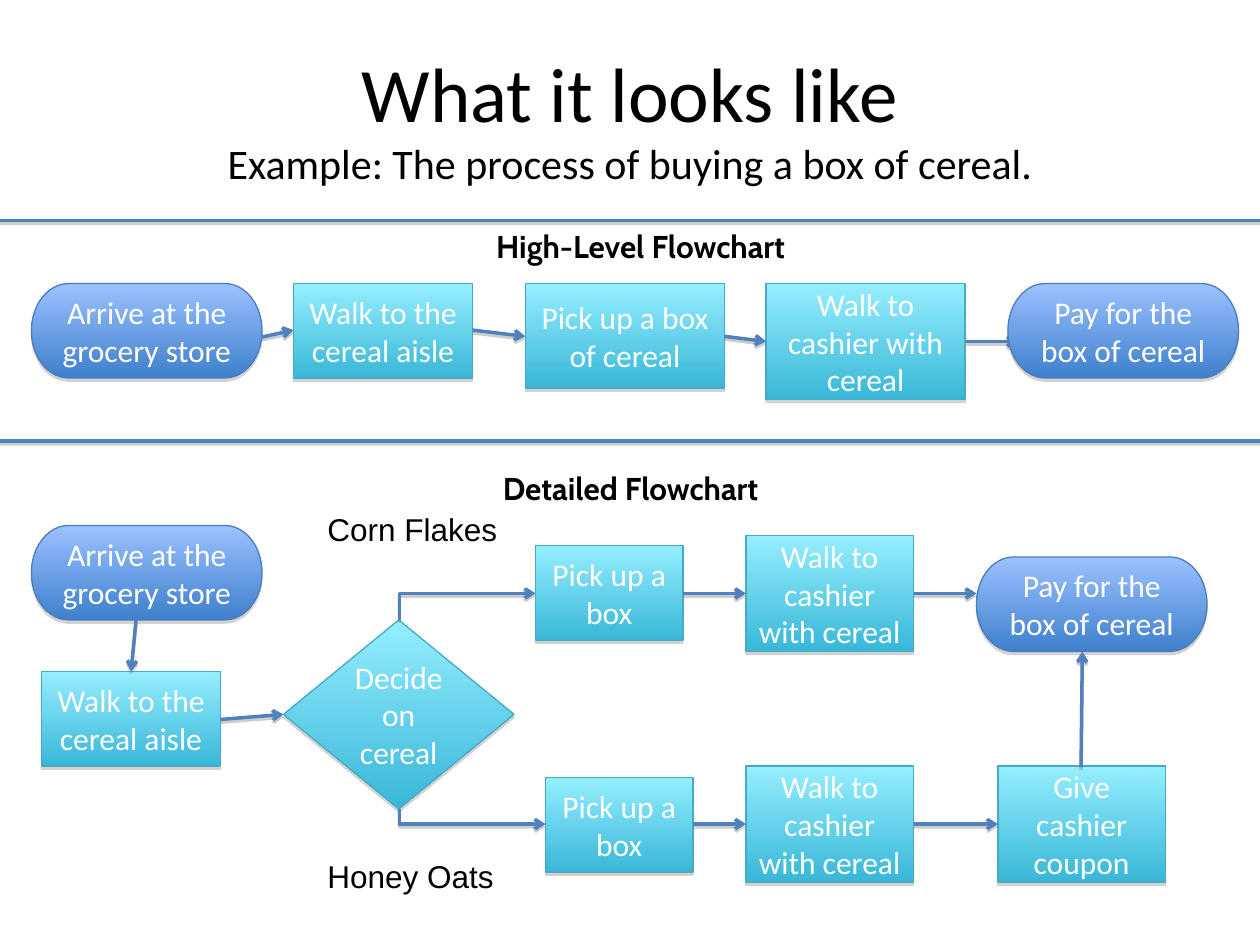
from lxml.etree import SubElement
from pptx import Presentation
from pptx.dml.color import RGBColor
from pptx.enum.shapes import MSO_CONNECTOR as Connector, MSO_SHAPE as Preset
from pptx.enum.text import MSO_ANCHOR as Anchor, MSO_AUTO_SIZE as AutoSize, PP_ALIGN as Align
from pptx.oxml.ns import qn
from pptx.util import Inches, Pt

# Gradient top, gradient bottom, outline
AQUA = ("95EEFF", "39B7D8", "46AAC5")
BLUE = ("9BC1FF", "3F80CD", "4A7EBB")
LINE = "4F81BD"

TERMINATOR_SIZE = (1.83, 0.75)
SHORT_BOX = (1.17, 0.75)
AISLE_BOX = (1.42, 0.75)
CASHIER_BOX = (1.33, 0.92)
UPPER_ROW, LOWER_ROW, DECISION_X = 4.71, 6.54, 3.17

# Text, left, top, size
PROCESSES = [
    ("Walk to the cereal aisle", 2.33, 2.25, AISLE_BOX),
    ("Pick up a box of cereal", 4.17, 2.25, (1.58, 0.83)),
    ("Walk to cashier with cereal", 6.08, 2.25, (1.58, 0.92)),
    ("Walk to the cereal aisle", 0.33, 5.33, AISLE_BOX),
    ("Pick up a box", 4.25, 4.33, SHORT_BOX),
    ("Pick up a box", 4.33, 6.17, SHORT_BOX),
    ("Walk to cashier with cereal", 5.92, 4.25, CASHIER_BOX),
    ("Walk to cashier with cereal", 5.92, 6.08, CASHIER_BOX),
    ("Give cashier coupon", 7.92, 6.08, CASHIER_BOX),
]
TERMINATORS = [
    ("Arrive at the grocery store", 0.25, 2.25),
    ("Pay for the box of cereal", 8, 2.25),
    ("Arrive at the grocery store", 0.25, 4.17),
    ("Pay for the box of cereal", 7.75, 4.42),
]
# Start x, start y, end x, end y
ARROWS = [
    (1.92, 2.71, 2.33, 2.62),
    (3.75, 2.62, 4.17, 2.67),
    (5.75, 2.67, 6.08, 2.71),
    (7.67, 2.71, 8.08, 2.71),
    (1.08, 4.92, 1.04, 5.33),
    (1.75, 5.71, 2.25, 5.67),
    (5.42, UPPER_ROW, 5.92, UPPER_ROW),
    (7.25, UPPER_ROW, 7.75, UPPER_ROW),
    (5.5, LOWER_ROW, 5.92, LOWER_ROW),
    (7.25, LOWER_ROW, 7.92, LOWER_ROW),
    (8.58, 6.09, 8.59, 5.17),
]
# Text, left, top, width, font, bold, alignment
LABELS = [
    ("High-Level Flowchart", 2, 1.75, 6.17, "Cabin", True, Align.CENTER),
    ("Detailed Flowchart", 1.92, 3.67, 6.17, "Cabin", True, Align.CENTER),
    ("Corn Flakes", 2.5, 4, 1.75, "Arial", False, Align.LEFT),
    ("Honey Oats", 2.5, 6.75, 1.75, "Arial", False, Align.LEFT),
]


def color(value):
    return RGBColor.from_string(value)


def add_run(paragraph, text, size=18, font="Calibri", fill="000000", bold=False):
    run = paragraph.add_run()
    run.text = text
    run.font.size = Pt(size)
    run.font.name = font
    run.font.bold = bold
    run.font.color.rgb = color(fill)


def add_shadow(shape, distance, opacity):
    """Put a sharp grey shadow straight below a shape or connector."""
    properties = shape._element.spPr
    effects = SubElement(properties, qn("a:effectLst"))
    shadow = SubElement(effects, qn("a:outerShdw"), blurRad="0",
                        dist=str(Pt(distance)), dir="5400000", rotWithShape="0")
    grey = SubElement(shadow, qn("a:srgbClr"), val="808080")
    SubElement(grey, qn("a:alpha"), val=str(opacity * 1000))


def add_step(slide, preset, text, left, top, size, palette):
    width, height = size
    shape = slide.shapes.add_shape(preset, Inches(left), Inches(top),
                                   Inches(width), Inches(height))
    shape.fill.gradient()
    shape.fill.gradient_angle = 270
    for stop, value, position in zip(shape.fill.gradient_stops, palette, (0, 1)):
        stop.color.rgb = color(value)
        stop.position = position
    shape.line.color.rgb = color(palette[2])
    shape.line.width = Pt(0.75)
    add_shadow(shape, 1.8, 35)
    frame = shape.text_frame
    frame.word_wrap = True
    frame.vertical_anchor = Anchor.MIDDLE
    paragraph = frame.paragraphs[0]
    paragraph.alignment = Align.CENTER
    add_run(paragraph, text, fill="FFFFFF")


def add_line(slide, x1, y1, x2, y2, arrow=True, kind=Connector.STRAIGHT):
    connector = slide.shapes.add_connector(kind, Inches(x1), Inches(y1),
                                           Inches(x2), Inches(y2))
    connector.line.color.rgb = color(LINE)
    connector.line.width = Pt(2)
    if arrow:
        SubElement(connector.line._get_or_add_ln(), qn("a:tailEnd"), type="arrow")
    add_shadow(connector, 1.6, 38)
    return connector


def add_branch(slide, x1, y1, x2, y2):
    """Draw an arrow that leaves vertically, then turns right."""
    width, height = abs(y2 - y1), x2 - x1
    left, top = (x1 + x2 - width) / 2, (y1 + y2 - height) / 2
    connector = add_line(slide, left, top, left + width, top + height,
                         kind=Connector.ELBOW)
    properties = connector._element.spPr
    properties.find(qn("a:prstGeom")).set("prst", "bentConnector2")
    transform = properties.find(qn("a:xfrm"))
    upward = y2 < y1
    transform.set("rot", str((90 if upward else 270) * 60000))
    transform.set("flipH", "1")
    transform.set("flipV", "1" if upward else "0")


def add_label(slide, text, left, top, width, font, bold, alignment):
    box = slide.shapes.add_textbox(Inches(left), Inches(top), Inches(width), Inches(0.4))
    frame = box.text_frame
    frame.word_wrap = True
    frame.auto_size = AutoSize.SHAPE_TO_FIT_TEXT
    paragraph = frame.paragraphs[0]
    paragraph.alignment = alignment
    add_run(paragraph, text, font=font, bold=bold)


def set_title(slide):
    title = slide.shapes.title
    title.left, title.top = Inches(0.5), Inches(0.3)
    title.width, title.height = Inches(9), Inches(1.25)
    title.text_frame.vertical_anchor = Anchor.MIDDLE
    paragraph = title.text_frame.paragraphs[0]
    paragraph.alignment = Align.CENTER
    add_run(paragraph, "What it looks like", 44)
    paragraph.add_line_break()
    add_run(paragraph, "Example: The process of buying a box of cereal.", 24)


def main():
    presentation = Presentation()
    presentation.slide_width, presentation.slide_height = Inches(10), Inches(7.5)
    slide = presentation.slides.add_slide(presentation.slide_layouts[5])
    set_title(slide)

    # Process steps and the decision
    for text, left, top, size in PROCESSES:
        add_step(slide, Preset.FLOWCHART_PROCESS, text, left, top, size, AQUA)
    add_step(slide, Preset.FLOWCHART_DECISION, "Decide on cereal", 2.25, 4.92,
             (1.83, 1.5), AQUA)

    # Arrows, branches and section dividers
    for arrow in ARROWS:
        add_line(slide, *arrow)
    add_branch(slide, DECISION_X, 4.92, 4.25, UPPER_ROW)
    add_branch(slide, DECISION_X, 6.42, 4.33, LOWER_ROW)
    for y in (1.75, 3.5):
        add_line(slide, 0, y, 10, y, arrow=False)

    # Headings and branch names
    for label in LABELS:
        add_label(slide, *label)

    # Start and end points lie over the arrow ends
    for text, left, top in TERMINATORS:
        add_step(slide, Preset.FLOWCHART_TERMINATOR, text, left, top,
                 TERMINATOR_SIZE, BLUE)

    presentation.save("out.pptx")


if __name__ == "__main__":
    main()
